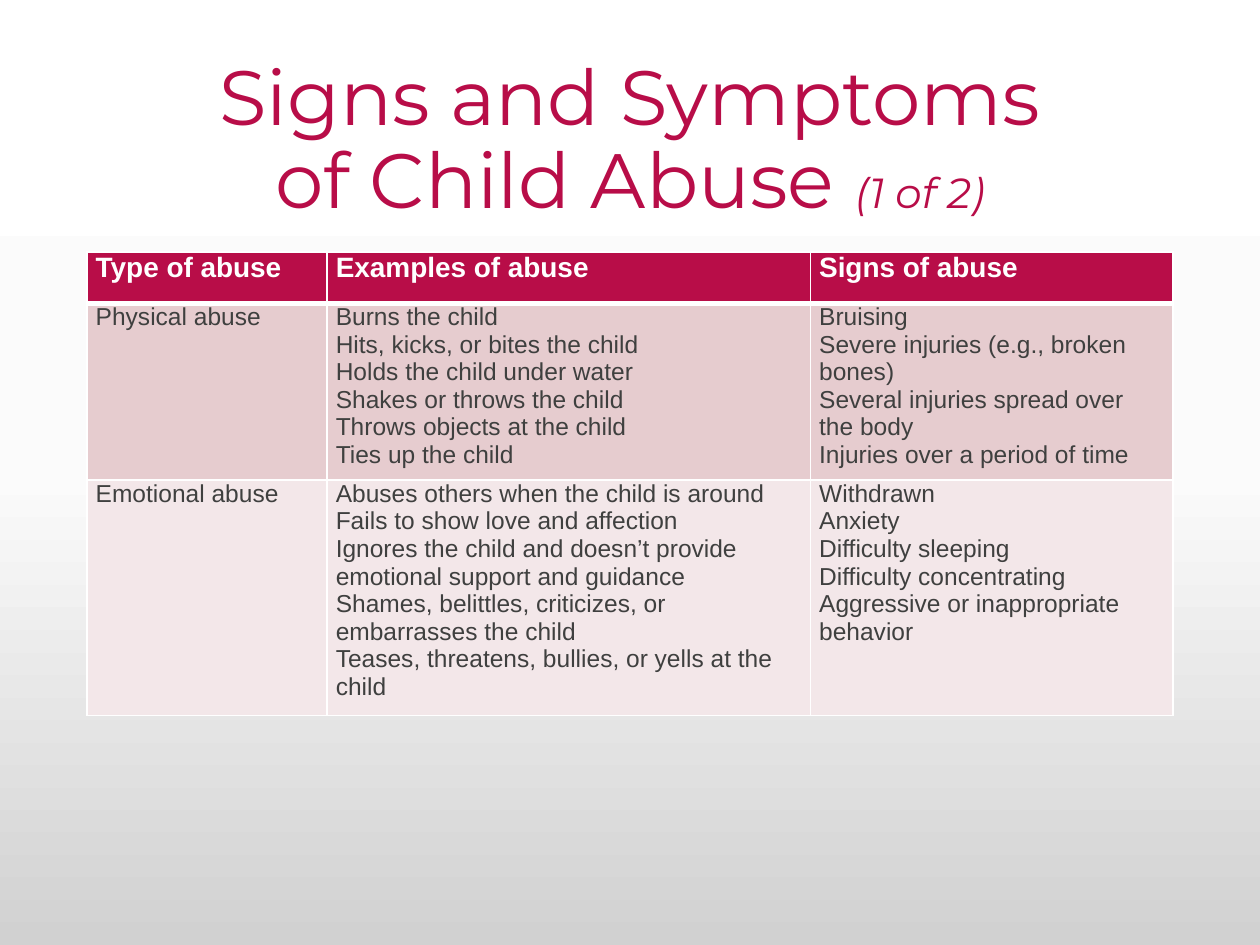
import copy
from dataclasses import dataclass

import lxml.etree
import pptx
import pptx.dml.color
import pptx.enum.text
import pptx.oxml.ns
import pptx.util

Cm = pptx.util.Cm
Pt = pptx.util.Pt
RGB = pptx.dml.color.RGBColor.from_string
qn = pptx.oxml.ns.qn


@dataclass(frozen=True)
class Theme:
    main: str = "B80D48"
    ink: str = "3F403F"
    white: str = "FFFFFF"
    bands: tuple = ("E6CCCF", "F3E7E9")
    back: tuple = ((0, "FFFFFF"), (0.5, "FBFBFB"), (1, "D1D1D1"))
    title: int = 44
    note: int = 24
    head: int = 16
    body: int = 14
    face: str = "Montserrat"
    sans: str = "Arial"


THEME = Theme()

HEADS = ["Type of abuse", "Examples of abuse", "Signs of abuse"]
ROWS = [
    [
        ["Physical abuse"],
        [
            "Burns the child",
            "Hits, kicks, or bites the child",
            "Holds the child under water",
            "Shakes or throws the child",
            "Throws objects at the child",
            "Ties up the child",
        ],
        [
            "Bruising",
            "Severe injuries (e.g., broken bones)",
            "Several injuries spread over the body",
            "Injuries over a period of time",
        ],
    ],
    [
        ["Emotional abuse"],
        [
            "Abuses others when the child is around",
            "Fails to show love and affection",
            "Ignores the child and doesn’t provide emotional support and guidance",
            "Shames, belittles, criticizes, or embarrasses the child",
            "Teases, threatens, bullies, or yells at the child",
        ],
        [
            "Withdrawn",
            "Anxiety",
            "Difficulty sleeping",
            "Difficulty concentrating",
            "Aggressive or inappropriate behavior",
        ],
    ],
]


def write(para, text, size, color, font=THEME.sans, bold=False, italic=False):
    for i, line in enumerate(text.split("\n")):
        if i:
            para.add_line_break()
        run = para.add_run()
        run.text = line
        run.font.size = Pt(size)
        run.font.name = font
        run.font.bold = bold
        run.font.italic = italic
        run.font.color.rgb = RGB(color)


def paint(slide):
    fill = slide.background.fill
    fill.gradient()
    fill.gradient_angle = 270
    first = fill.gradient_stops[0]._gs
    first.addnext(copy.deepcopy(first))
    for stop, (place, color) in zip(fill.gradient_stops, THEME.back):
        stop.position = place
        stop.color.rgb = RGB(color)


def title(slide, left, top, width, height):
    frame = slide.shapes.add_textbox(left, top, width, height).text_frame
    frame.word_wrap = True
    frame.vertical_anchor = pptx.enum.text.MSO_ANCHOR.MIDDLE
    para = frame.paragraphs[0]
    para.alignment = pptx.enum.text.PP_ALIGN.CENTER
    para.line_spacing = 0.9
    look = dict(color=THEME.main, font=THEME.face)
    write(para, "Signs and Symptoms\nof Child Abuse ", THEME.title, **look)
    write(para, "(1 of 2)", THEME.note, italic=True, **look)


def edge(cell, base):
    props = cell._tc.get_or_add_tcPr()
    for side, width in (("L", 1), ("R", 1), ("T", 1), ("B", base)):
        line = lxml.etree.SubElement(props, qn("a:ln" + side), w=str(Pt(width)))
        fill = lxml.etree.SubElement(line, qn("a:solidFill"))
        lxml.etree.SubElement(fill, qn("a:srgbClr"), val=THEME.white)


def fill_cell(cell, lines, back, base=1, **look):
    cell.margin_left = cell.margin_right = Cm(0.18)
    cell.margin_top = cell.margin_bottom = 0
    edge(cell, base)
    cell.fill.solid()
    cell.fill.fore_color.rgb = RGB(back)
    frame = cell.text_frame
    for i, line in enumerate(lines):
        para = frame.add_paragraph() if i else frame.paragraphs[0]
        write(para, line, **look)


def grid(slide, left, top, width, height):
    shape = slide.shapes.add_table(
        len(ROWS) + 1, len(HEADS), left, top, width, height
    )
    table = shape.table
    for col, share in zip(table.columns, (0.221, 0.445, 0.334)):
        col.width = int(width * share)
    for row in table.rows:
        row.height = Cm(1.04)
    shape.height = height
    for c, head in enumerate(HEADS):
        fill_cell(table.cell(0, c), [head], THEME.main, base=3,
                  size=THEME.head, color=THEME.white, bold=True)
    for r, (row, band) in enumerate(zip(ROWS, THEME.bands), 1):
        for c, lines in enumerate(row):
            fill_cell(table.cell(r, c), lines, band,
                      size=THEME.body, color=THEME.ink)


def main():
    deck = pptx.Presentation()
    deck.slide_width, deck.slide_height = Cm(25.4), Cm(19.05)
    slide = deck.slides.add_slide(deck.slide_layouts[6])
    left, width = Cm(1.75), Cm(21.9)
    paint(slide)
    title(slide, left, Cm(1.02), width, Cm(3.68))
    grid(slide, left, Cm(5.08), width, Cm(9.32))
    deck.save("out.pptx")


if __name__ == "__main__":
    main()
